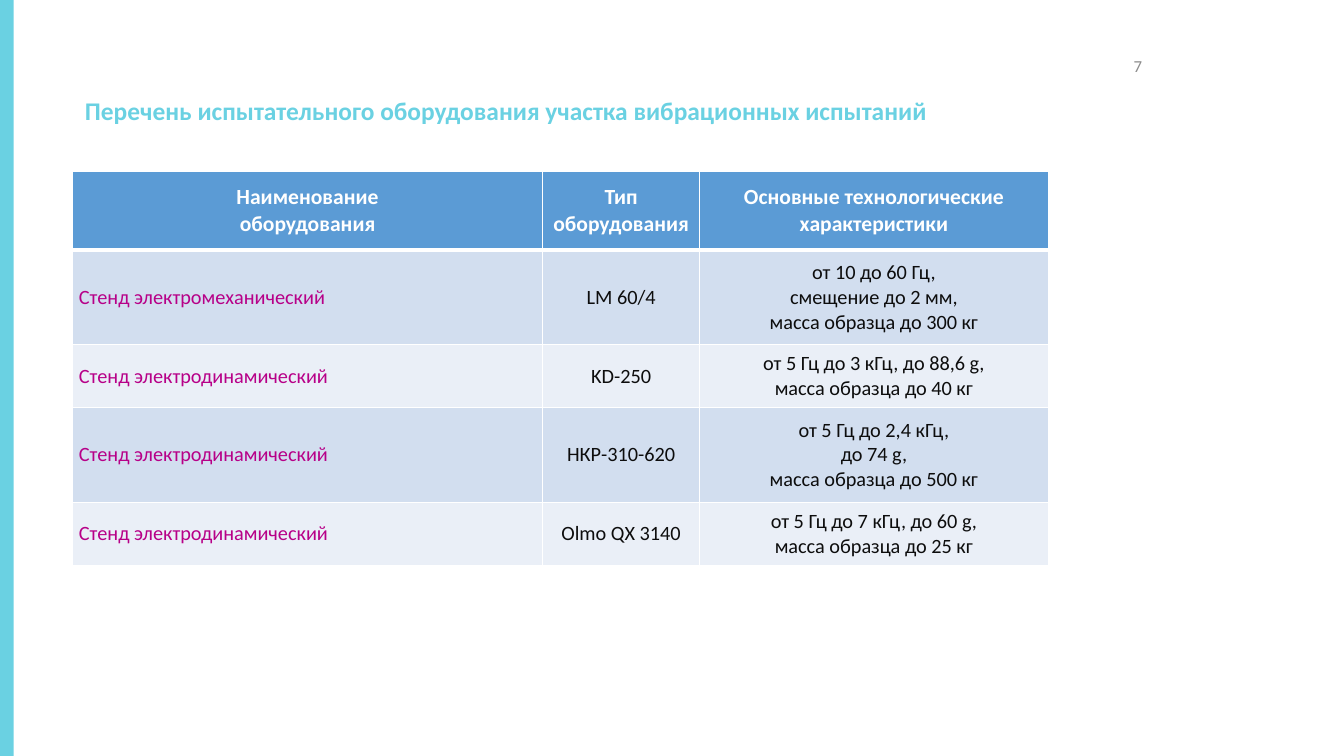
from lxml.etree import SubElement
from pptx import Presentation
from pptx.dml.color import RGBColor as Rgb
from pptx.enum.shapes import MSO_SHAPE as Shape
from pptx.enum.text import MSO_ANCHOR as Anchor, PP_ALIGN as Align
from pptx.oxml.ns import qn
from pptx.util import Inches, Pt

WIDTH, HEIGHT = Inches(14.7), Inches(8.27)
FONT = "Calibri"
COLORS = {
    "accent": "6AD1E2",
    "number": "8C8C8C",
    "header": "5B9BD5",
    "odd": "D2DEEF",
    "even": "EAEFF7",
    "white": "FFFFFF",
    "name": "B70088",
    "text": "0D0D0D",
}
COLUMNS = [34.97, 11.7, 25.92]
ROWS = [10.4, 12.5, 8.36, 12.5, 8.36]
EQUIPMENT = [
    ("Наименование\nоборудования", "Тип\nоборудования",
     "Основные технологические характеристики"),
    ("Стенд электромеханический", "LM 60/4",
     "от 10 до 60 Гц,\nсмещение до 2 мм,\nмасса образца до 300 кг"),
    ("Стенд электродинамический", "KD-250",
     "от 5 Гц до 3 кГц, до 88,6 g,\nмасса образца до 40 кг"),
    ("Стенд электродинамический", "НКР-310-620",
     "от 5 Гц до 2,4 кГц,\nдо 74 g,\nмасса образца до 500 кг"),
    ("Стенд электродинамический", "Olmo QX 3140",
     "от 5 Гц до 7 кГц, до 60 g,\nмасса образца до 25 кг"),
]


def across(percent):
    """Return a percentage of the slide width."""
    return round(WIDTH * percent / 100)


def down(percent):
    """Return a percentage of the slide height."""
    return round(HEIGHT * percent / 100)


def area(left, top, width, height):
    """Turn percentages of the slide into a position and a size."""
    return across(left), down(top), across(width), down(height)


def paint(target, color):
    """Fill a shape or a cell with a named colour."""
    target.fill.solid()
    target.fill.fore_color.rgb = Rgb.from_string(COLORS[color])


def write(para, text, size, color, bold=False, align=Align.LEFT):
    """Write styled lines of text into a paragraph."""
    para.alignment = align
    for index, line in enumerate(text.split("\n")):
        if index:
            para.add_line_break()
        span = para.add_run()
        span.text = line
        span.font.name = FONT
        span.font.size = Pt(size)
        span.font.bold = bold
        span.font.color.rgb = Rgb.from_string(COLORS[color])


def add_stripe(page):
    """Draw the colour stripe along the left edge."""
    stripe = page.shapes.add_shape(Shape.RECTANGLE, *area(0, 0, 1.02, 100))
    stripe.shadow.inherit = False
    paint(stripe, "accent")
    stripe.line.fill.background()


def add_text(page, place, text, size, color, **style):
    """Add a vertically centred text box."""
    box = page.shapes.add_textbox(*area(*place))
    frame = box.text_frame
    frame.word_wrap = True
    frame.vertical_anchor = Anchor.MIDDLE
    para = frame.paragraphs[0]
    para.line_spacing = 0.9 if style.get("bold") else 1
    write(para, text, size, color, **style)


def add_borders(cell, top, bottom):
    """Give a cell white borders with the given top and bottom points."""
    properties = cell._tc.get_or_add_tcPr()
    for side, points in (("L", 1), ("R", 1), ("T", top), ("B", bottom)):
        line = SubElement(properties, qn(f"a:ln{side}"), w=str(Pt(points)))
        fill = SubElement(line, qn("a:solidFill"))
        SubElement(fill, qn("a:srgbClr"), val=COLORS["white"])


def fill_cell(cell, text, row, column):
    """Style one table cell by its row and column and write its text."""
    add_borders(cell, 3 if row == 1 else 1, 3 if row == 0 else 1)
    cell.vertical_anchor = Anchor.MIDDLE
    cell.margin_left = cell.margin_right = Inches(0.07)
    cell.margin_top = cell.margin_bottom = 0
    para = cell.text_frame.paragraphs[0]
    if row == 0:
        paint(cell, "header")
        write(para, text, 17, "white", bold=True, align=Align.CENTER)
        return
    paint(cell, "odd" if row % 2 else "even")
    if column == 0:
        write(para, text, 16, "name")
    else:
        write(para, text, 16, "text", align=Align.CENTER)


def add_equipment_table(page):
    """Add the table of test equipment."""
    place = area(5.4, 22.68, sum(COLUMNS), sum(ROWS))
    table = page.shapes.add_table(len(ROWS), len(COLUMNS), *place).table
    for column, share in zip(table.columns, COLUMNS):
        column.width = across(share)
    for row, share in zip(table.rows, ROWS):
        row.height = down(share)
    for row, texts in enumerate(EQUIPMENT):
        for column, text in enumerate(texts):
            fill_cell(table.cell(row, column), text, row, column)


def main():
    """Build the slide and save the deck."""
    deck = Presentation()
    deck.slide_width, deck.slide_height = WIDTH, HEIGHT
    page = deck.slides.add_slide(deck.slide_layouts[6])
    add_stripe(page)
    add_text(page, (5.65, 11.37, 77.01, 7.01),
             "Перечень испытательного оборудования участка вибрационных испытаний",
             20, "accent", bold=True)
    add_text(page, (72.31, 6.05, 13.33, 5.32), "7", 13.2, "number",
             align=Align.RIGHT)
    add_equipment_table(page)
    deck.save("out.pptx")


if __name__ == "__main__":
    main()
